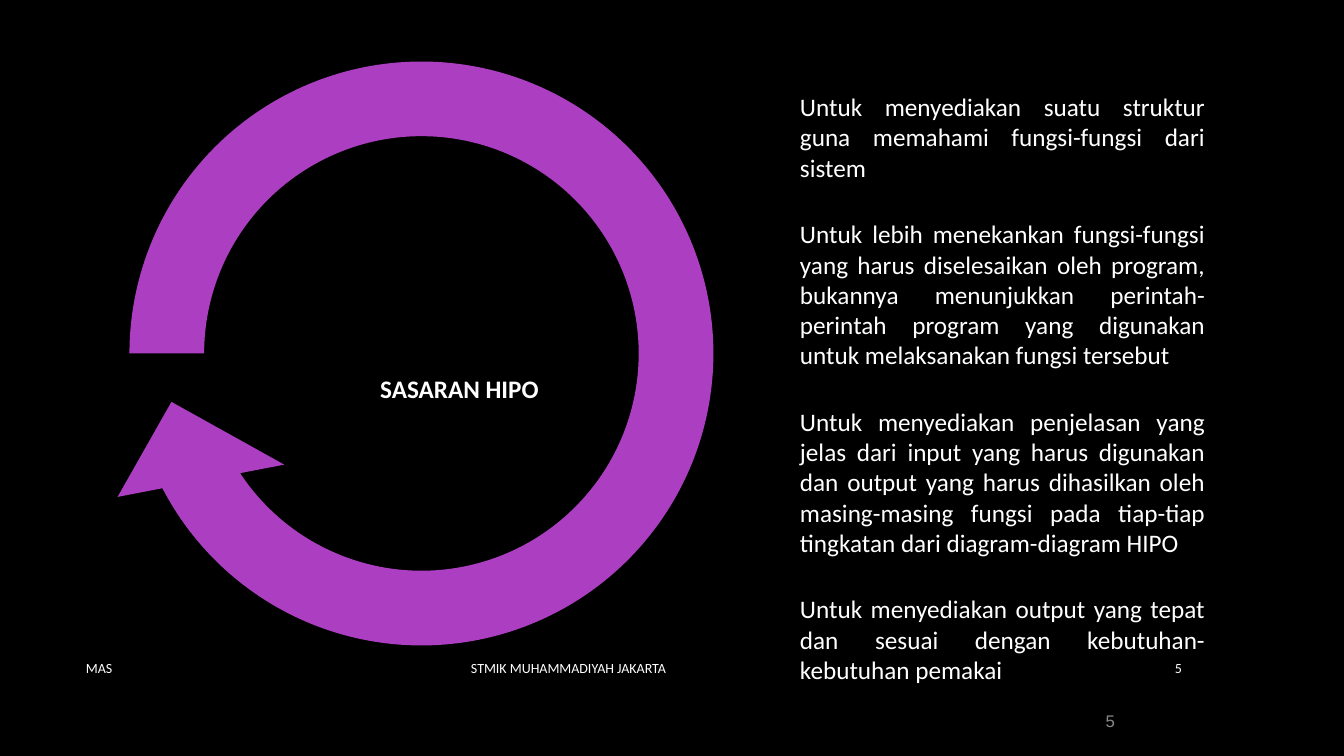
"""Build the slide on the goals of HIPO, with a circular arrow and four goals."""
import pptx
import pptx.dml.color
import pptx.enum.shapes
import pptx.enum.text
import pptx.util

PX = 914400 / 100.8
ALIGN = pptx.enum.text.PP_ALIGN


def color(fmt, value):
    fmt.solid()
    fmt.fore_color.rgb = pptx.dml.color.RGBColor.from_string(value)


def text(box, *paragraphs, size=18, font="Calibri", fill="FFFFFF", bold=False,
         align=ALIGN.LEFT, inset=1, gap=0):
    tf = s.shapes.add_textbox(*[round(n * PX) for n in box]).text_frame
    tf.word_wrap = True
    tf.vertical_anchor = pptx.enum.text.MSO_ANCHOR.MIDDLE
    tf.margin_left = tf.margin_right = round(inset * PX)
    tf.margin_top = tf.margin_bottom = round(PX)
    for i, line in enumerate(paragraphs):
        p = tf.paragraphs[0] if i == 0 else tf.add_paragraph()
        p.alignment = align
        p.space_before = pptx.util.Pt(gap if i else 0)
        r = p.add_run()
        r.text = line
        r.font.size = pptx.util.Pt(size)
        r.font.name = font
        r.font.bold = bold
        color(r.font.fill, fill)


prs = pptx.Presentation()
prs.slide_width = round(1344 * PX)
prs.slide_height = round(756 * PX)
s = prs.slides.add_slide(prs.slide_layouts[6])
color(s.background.fill, "000000")

arrow = s.shapes.add_shape(pptx.enum.shapes.MSO_SHAPE.CIRCULAR_ARROW,
                           *[round(n * PX) for n in (82, 14, 679, 679)])
arrow.shadow.inherit = False
color(arrow.fill, "AC3EC1")
arrow.line.fill.background()
for i, value in enumerate((0.11, 11.42, 90, 108, 0.125)):
    arrow.adjustments[i] = value

text((270, 293, 379, 190), "SASARAN HIPO", bold=True, align=ALIGN.CENTER)

goals = (
    "Untuk menyediakan suatu struktur guna memahami fungsi-fungsi dari sistem",
    "Untuk lebih menekankan fungsi-fungsi yang harus diselesaikan oleh program, "
    "bukannya menunjukkan perintah-perintah program yang digunakan untuk "
    "melaksanakan fungsi tersebut",
    "Untuk menyediakan penjelasan yang jelas dari input yang harus digunakan dan "
    "output yang harus dihasilkan oleh masing-masing fungsi pada tiap-tiap "
    "tingkatan dari diagram-diagram HIPO",
    "Untuk menyediakan output yang tepat dan sesuai dengan kebutuhan-kebutuhan pemakai",
)
text((799, 88, 407, 600), *goals, align=ALIGN.JUSTIFY, gap=26)

for left, width, label, align in ((76, 100, "MAS", ALIGN.LEFT),
                                  (461, 260, "STMIK MUHAMMADIYAH JAKARTA", ALIGN.LEFT),
                                  (1132, 60, "5", ALIGN.RIGHT)):
    text((left, 647, width, 41), label, size=10, align=align, inset=10)
text((890, 701, 235, 40), "5", size=12, font="Arial", fill="898989",
     align=ALIGN.RIGHT, inset=10)

prs.save("out.pptx")
